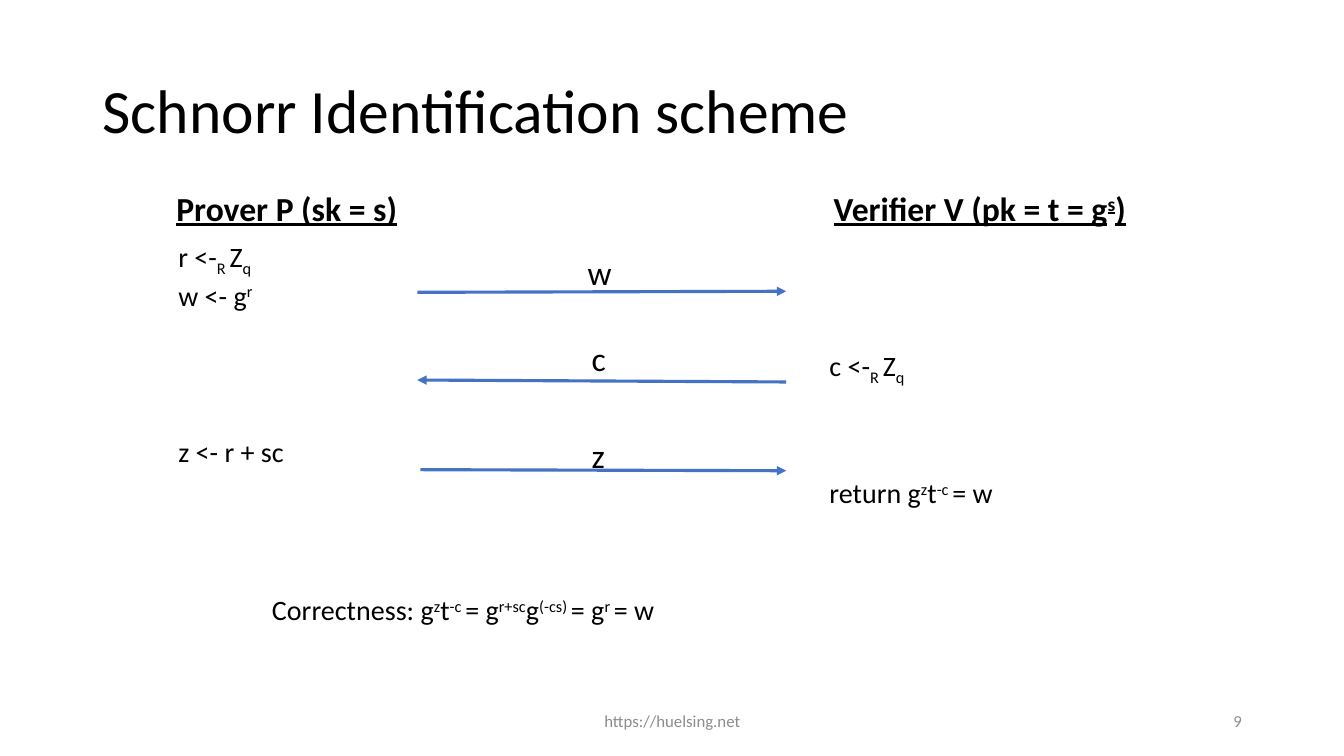
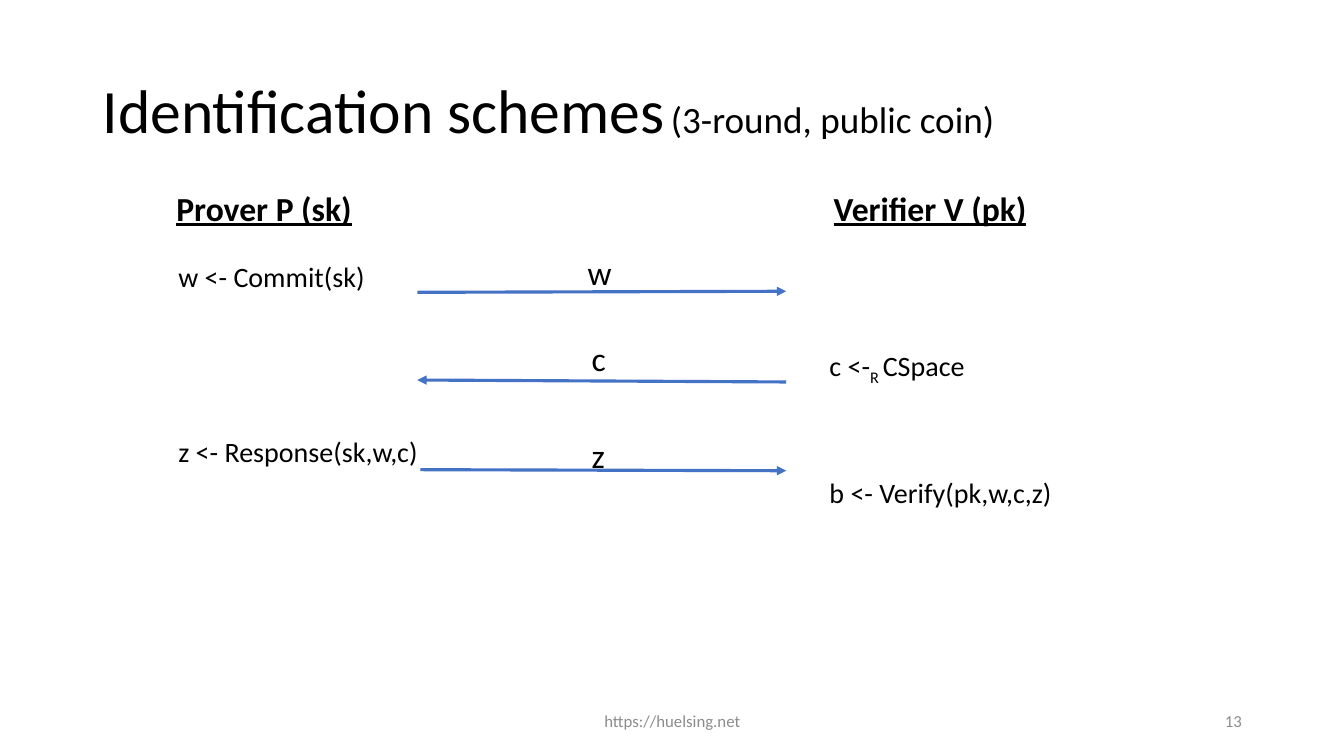
from pptx import Presentation
from pptx.dml.color import RGBColor
from pptx.enum.shapes import MSO_CONNECTOR
from pptx.enum.text import MSO_ANCHOR, MSO_AUTO_SIZE, PP_ALIGN
from pptx.oxml.ns import qn
from pptx.util import Inches, Pt
from lxml.etree import SubElement

BLACK = RGBColor(0x00, 0x00, 0x00)
GRAY = RGBColor(0x8C, 0x8C, 0x8C)
BLUE = RGBColor(0x44, 0x72, 0xC4)

BASELINES = {"^": "30000", "_": "-25000"}

WIDE_INSETS = {
    "margin_left": Inches(0.13), "margin_right": Inches(0.13),
    "margin_top": Inches(0.07), "margin_bottom": Inches(0.07),
    "auto_size": MSO_AUTO_SIZE.SHAPE_TO_FIT_TEXT,
}
MIDDLE = {"vertical_anchor": MSO_ANCHOR.MIDDLE}
SMALL = {"size": Pt(12)}

STYLES = {
    "title": {"frame": MIDDLE, "paragraph": {"line_spacing": 0.9},
              "font": {"size": Pt(44)}, "color": BLACK},
    "heading": {"frame": WIDE_INSETS, "paragraph": {},
                "font": {"size": Pt(24), "bold": True, "underline": True}, "color": BLACK},
    "message": {"frame": WIDE_INSETS, "paragraph": {},
                "font": {"size": Pt(24)}, "color": BLACK},
    "step": {"frame": {"auto_size": MSO_AUTO_SIZE.SHAPE_TO_FIT_TEXT}, "paragraph": {},
             "font": {"size": Pt(20)}, "color": BLACK},
    "footer": {"frame": MIDDLE, "paragraph": {"alignment": PP_ALIGN.CENTER},
               "font": SMALL, "color": GRAY},
    "number": {"frame": MIDDLE, "paragraph": {"alignment": PP_ALIGN.RIGHT},
               "font": SMALL, "color": GRAY},
}

TITLE_BOX = (6.9, 5.33, 86.25, 19.33)
FOOTER_BOX = (33.15, 92.67, 33.75, 5.33)
NUMBER_BOX = (70.65, 92.67, 22.5, 5.33)
PROVER_HEADING = (12.15, 23.87, 18.6, 7.2)
VERIFIER_HEADING = (61.05, 23.87, 26.4, 7.2)
CHALLENGE_BOX = (60.98, 45.47, 14.85, 5.87)
RESPONSE_BOX = (12.53, 56.8, 19.8, 5.87)
VERDICT_BOX = (60.98, 62.27, 18.83, 5.87)

MESSAGES = [
    ("w", (42.75, 32.4), (31.05, 38.67), (58.5, 38.53)),
    ("c", (43.05, 43.73), (58.5, 50.53), (31.05, 50.27)),
    ("z", (43.05, 56.53), (31.28, 62.13), (58.5, 62.27)),
]
MESSAGE_SIZE = (3.53, 7.2)

SLIDES = [
    {
        "title": "Schnorr Identification scheme",
        "title_sizes": [44],
        "number": "9",
        "texts": [
            ("heading", PROVER_HEADING, ["Prover P (sk = s)"]),
            ("heading", VERIFIER_HEADING, ["Verifier V (pk = t = g|^s|)"]),
            ("step", (12.53, 31.07, 16.35, 10.27), ["r <-|_R |Z|_q", "w <- g|^r"]),
            ("step", CHALLENGE_BOX, ["c <-|_R |Z|_q"]),
            ("step", RESPONSE_BOX, ["z <- r + sc"]),
            ("step", VERDICT_BOX, ["return g|^z|t|^-c |= w"]),
            ("step", (19.5, 77.73, 47.1, 5.87),
             ["Correctness: g|^z|t|^-c |= g|^r+sc|g|^(-cs) |= g|^r |= w"]),
        ],
    },
    {
        "title": "Identification schemes| |(3-round, public coin)",
        "title_sizes": [44, 18, 26.5],
        "number": "13",
        "texts": [
            ("heading", PROVER_HEADING, ["Prover P (sk)"]),
            ("heading", VERIFIER_HEADING, ["Verifier V (pk)"]),
            ("step", (12.53, 33.73, 16.35, 5.87), ["w <- Commit(sk)"]),
            ("step", CHALLENGE_BOX, ["c <-|_R |CSpace"]),
            ("step", RESPONSE_BOX, ["z <- Response(sk,w,c)"]),
            ("step", VERDICT_BOX, ["b <- Verify(pk,w,c,z)"]),
        ],
    },
]

presentation = Presentation()
presentation.slide_width = Inches(13.33)
presentation.slide_height = Inches(7.5)


def to_lengths(shares):
    sides = (presentation.slide_width, presentation.slide_height)
    return [round(sides[index % 2] * share / 100) for index, share in enumerate(shares)]


def add_text(slide, style_name, box, lines):
    style = STYLES[style_name]
    frame = slide.shapes.add_textbox(*to_lengths(box)).text_frame
    frame.word_wrap = True
    for name, value in style["frame"].items():
        setattr(frame, name, value)
    for index, line in enumerate(lines):
        paragraph = frame.add_paragraph() if index else frame.paragraphs[0]
        for name, value in style["paragraph"].items():
            setattr(paragraph, name, value)
        for piece in line.split("|"):
            run = paragraph.add_run()
            run.text = piece.lstrip("^_")
            run.font.name = "Calibri"
            run.font.color.rgb = style["color"]
            for name, value in style["font"].items():
                setattr(run.font, name, value)
            if piece[0] in BASELINES:
                run._r.get_or_add_rPr().set("baseline", BASELINES[piece[0]])
    return frame


for content in SLIDES:
    slide = presentation.slides.add_slide(presentation.slide_layouts[6])
    title = add_text(slide, "title", TITLE_BOX, [content["title"]])
    for run, size in zip(title.paragraphs[0].runs, content["title_sizes"]):
        run.font.size = Pt(size)

    for label, corner, start, end in MESSAGES:
        arrow = slide.shapes.add_connector(MSO_CONNECTOR.STRAIGHT, *to_lengths(start + end))
        arrow.line.color.rgb = BLUE
        arrow.line.width = Pt(2.25)
        SubElement(arrow.line._get_or_add_ln(), qn("a:tailEnd"), type="triangle")
        SubElement(arrow._element.spPr, qn("a:effectLst"))
        add_text(slide, "message", corner + MESSAGE_SIZE, [label])

    for style_name, box, lines in content["texts"]:
        add_text(slide, style_name, box, lines)

    add_text(slide, "footer", FOOTER_BOX, ["https://huelsing.net"])
    add_text(slide, "number", NUMBER_BOX, [content["number"]])

presentation.save("out.pptx")
